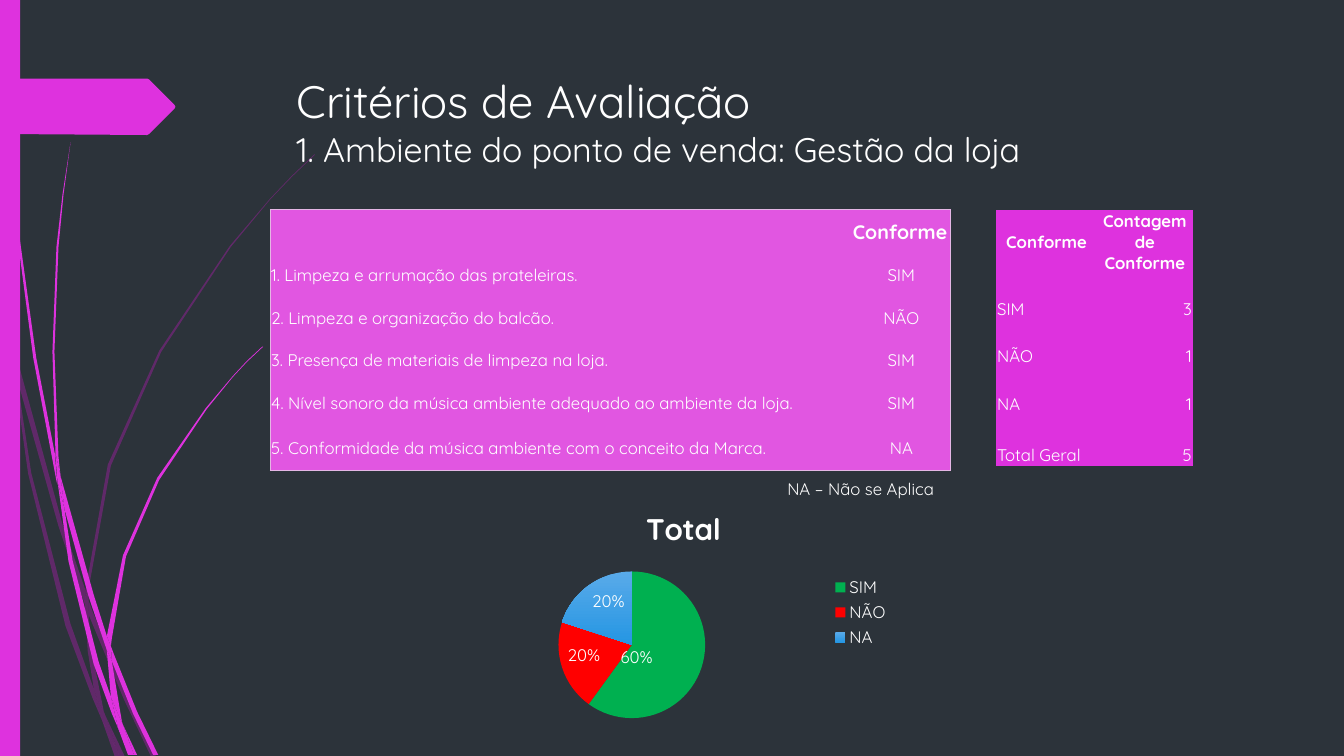
from copy import deepcopy
from dataclasses import dataclass

from pptx import Presentation
from pptx.chart.data import CategoryChartData
from pptx.dml.color import RGBColor as RGB
from pptx.enum.chart import XL_CHART_TYPE as CHART, XL_LABEL_POSITION as LABEL, XL_LEGEND_POSITION as LEGEND
from pptx.enum.shapes import MSO_SHAPE as SHAPE
from pptx.enum.text import MSO_ANCHOR as ANCHOR, MSO_AUTO_SIZE as AUTO, PP_ALIGN as ALIGN
from pptx.oxml import parse_xml
from pptx.oxml.ns import nsdecls, qn
from pptx.util import Inches, Pt
from lxml.etree import SubElement


@dataclass(frozen=True)
class Theme:
    font: str = "Quicksand"
    background: str = "2C333A"
    text: str = "FFFFFF"
    accent: str = "DE32DE"
    faint: str = "B01CB0"
    panel: str = "E156E1"
    border: str = "E4B6E4"
    yes: str = "00B050"
    no: str = "FF0000"
    na: tuple = ("59AAE9", "2596E3")
    title: float = 32.4
    subtitle: float = 24.3
    chart_title: float = 21.3
    header: float = 14
    body: float = 12


T = Theme()
NO_GRID = "{2D5ABB26-0587-4C30-8999-92F81FD0307C}"

# Outlines of the grass blades, as (x, y) points in inches
FAINT_BLADES = [
    [(.11, 3.5), (.09, 3.22), (0, 2.82), (0, 2.99), (.1, 3.44)],
    [(.58, 5.22), (.84, 5.99), (.85, 5.86), (.62, 5.2), (.14, 3.45), (.17, 3.76)],
    [(.92, 6.07), (.88, 5.96), (.88, 6.1), (1.23, 6.94), (1.5, 7.51), (1.55, 7.51), (1.27, 6.92)],
    [(1.19, 7.51), (1.24, 7.51), (1.05, 7.11)],
    [(.93, 6.83), (.7, 6.19), (.31, 4.69), (.17, 3.76), (.11, 3.5), (.28, 4.7), (.65, 6.21),
     (.92, 6.93), (1.01, 7.14), (.99, 7.07)],
    [(.84, 5.99), (.87, 6.46), (.93, 6.83), (.96, 6.92), (1.05, 7.11), (1.03, 7.06), (.91, 6.46),
     (.88, 6.1), (.88, 6.08)],
    [(.88, 5.84), (1.1, 4.62), (1.6, 3.49), (2.29, 2.45), (2.68, 1.98), (2.9, 1.75), (3.12, 1.54),
     (3.12, 1.53), (2.89, 1.75), (2.68, 1.97), (2.28, 2.44), (1.58, 3.48), (1.07, 4.61),
     (.85, 5.84), (.85, 5.86), (.88, 5.96)],
    [(1.01, 7.14), (1.14, 7.51), (1.19, 7.51)],
    [(.88, 6.08), (.88, 6.1), (.88, 5.96), (.85, 5.86), (.84, 5.99)],
    [(.96, 6.92), (.93, 6.83), (.99, 7.07), (1.01, 7.14), (1.19, 7.51), (1.05, 7.11)],
]
BRIGHT_BLADES = [
    [(.07, 1.1), (.17, 2.33), (.33, 3.55), (.56, 4.77), (.57, 4.81), (.55, 4.57), (.55, 4.53),
     (.36, 3.55), (.19, 2.32), (.08, 1.09), (.05, .48), (.04, 0), (.03, 0), (.04, .48)],
    [(.88, 5.92), (1.06, 6.45), (1.06, 6.31), (.93, 5.9), (.6, 4.72), (.64, 5.05)],
    [(1.13, 6.49), (1.1, 6.41), (1.11, 6.56), (1.32, 7.08), (1.52, 7.49), (1.57, 7.49), (1.36, 7.06)],
    [(1.1, 6.91), (.98, 6.57), (.72, 5.56), (.64, 5.05), (.57, 4.77), (.68, 5.57), (.93, 6.59),
     (1.11, 7.08), (1.17, 7.22), (1.16, 7.17)],
    [(.6, 4.72), (.58, 4.53), (.54, 3.49), (.58, 2.45), (.63, 1.93), (.7, 1.41), (.62, 1.93),
     (.56, 2.45), (.52, 3.49), (.55, 4.49)],
    [(1.33, 7.49), (1.36, 7.49), (1.22, 7.19)],
    [(.57, 4.77), (.64, 5.05), (.6, 4.72), (.55, 4.49), (.55, 4.53)],
    [(1.11, 6.33), (1.25, 5.52), (1.58, 4.76), (2.05, 4.06), (2.31, 3.74), (2.45, 3.59), (2.61, 3.44),
     (2.6, 3.44), (2.45, 3.58), (2.31, 3.73), (2.04, 4.05), (1.56, 4.74), (1.22, 5.51),
     (1.06, 6.31), (1.1, 6.41)],
    [(1.17, 7.22), (1.27, 7.49), (1.31, 7.49)],
    [(1.06, 6.45), (1.1, 6.91), (1.16, 7.06), (1.22, 7.19), (1.21, 7.16), (1.11, 6.56), (1.09, 6.51)],
    [(1.06, 6.45), (1.09, 6.51), (1.11, 6.56), (1.1, 6.41), (1.06, 6.31)],
    [(1.16, 7.06), (1.1, 6.91), (1.16, 7.17), (1.17, 7.22), (1.3, 7.49), (1.33, 7.49), (1.22, 7.19)],
]
FLAG = [(0, .78), (1.46, .78), (1.48, .79), (1.73, 1.04), (1.74, 1.06), (1.73, 1.08), (1.48, 1.33),
        (1.46, 1.34), (0, 1.33)]


def rgb(color):
    return RGB.from_string(color)


def set_font(font, size, bold=False):
    font.name, font.size, font.bold = T.font, Pt(size), bold
    font.color.rgb = rgb(T.text)


def paint(sp, color, alpha=None):
    sp.shadow.inherit = False
    sp.fill.solid()
    sp.fill.fore_color.rgb = rgb(color)
    sp.line.fill.background()
    if alpha:
        clr = sp.fill._xPr.find(qn("a:solidFill"))[0]
        SubElement(clr, qn("a:alpha"), val=str(alpha * 1000))


def add_outline(shapes, points, color, alpha=None):
    start, *rest = [(Inches(x), Inches(y)) for x, y in points]
    builder = shapes.build_freeform(*start)
    builder.add_line_segments(rest, close=True)
    paint(builder.convert_to_shape(), color, alpha)


def add_decoration(slide):
    for blades, color, alpha in ((FAINT_BLADES, T.faint, 40), (BRIGHT_BLADES, T.accent, None)):
        group = slide.shapes.add_group_shape()
        for points in blades:
            add_outline(group.shapes, points, color, alpha)
    bar = slide.shapes.add_shape(SHAPE.RECTANGLE, 0, 0, Inches(.2), Inches(7.5))
    paint(bar, T.accent)
    add_outline(slide.shapes, FLAG, T.accent)


def set_title(slide, title, subtitle):
    sp = slide.shapes.title
    sp.left, sp.top, sp.width, sp.height = map(Inches, (2.84, .68, 9.75, 1.4))
    tf = sp.text_frame
    tf.text = f"{title}\v{subtitle}"
    tf.auto_size, tf.vertical_anchor, tf.word_wrap = AUTO.NONE, ANCHOR.TOP, True
    p = tf.paragraphs[0]
    p.alignment = ALIGN.LEFT
    for r, size in zip(p.runs, (T.title, T.subtitle)):
        set_font(r.font, size)


def add_border(cell, sides):
    tcPr = cell._tc.get_or_add_tcPr()
    lines = [parse_xml(f'<a:ln{side} {nsdecls("a")} w="9525"><a:solidFill><a:srgbClr val="{T.border}"/>'
                       f'</a:solidFill></a:ln{side}>') for side in "LRTB" if side in sides]
    for i, line in enumerate(lines):
        tcPr.insert(i, line)


def add_grid(slide, left, top, widths, heights, rows, fill, aligns, anchor, header_size, framed=False):
    frame = slide.shapes.add_table(len(rows), len(widths), Inches(left), Inches(top),
                                   Inches(sum(widths)), Inches(sum(heights)))
    table = frame.table
    table.first_row = table.horz_banding = False
    table._tbl.tblPr.find(qn("a:tableStyleId")).text = NO_GRID
    for column, width in zip(table.columns, widths):
        column.width = Inches(width)
    last_row, last_col = len(rows) - 1, len(widths) - 1
    for i, row in enumerate(rows):
        table.rows[i].height = Inches(heights[i])
        for j, text in enumerate(row):
            cell = table.cell(i, j)
            cell.margin_left = cell.margin_right = cell.margin_top = Inches(.01)
            cell.margin_bottom = 0
            cell.vertical_anchor = anchor if i else ANCHOR.MIDDLE
            cell.fill.solid()
            cell.fill.fore_color.rgb = rgb(fill)
            p = cell.text_frame.paragraphs[0]
            p.text = text
            p.alignment = aligns[bool(i)][j]
            set_font(p.font, T.body if i else header_size, bold=not i)
            for r in p.runs:
                set_font(r.font, T.body if i else header_size, bold=not i)
            if framed:
                edges = {"L": j == 0, "R": j == last_col, "T": i == 0, "B": i == last_row}
                add_border(cell, [side for side, on in edges.items() if on])


def layout_xml(**values):
    parts = "".join(f'<c:{name} val="{value}"/>' for name, value in values.items())
    return parse_xml(f'<c:layout {nsdecls("c")}><c:manualLayout>{parts}</c:manualLayout></c:layout>')


def add_pie(slide, title, categories, values):
    data = CategoryChartData()
    data.categories = categories
    data.add_series(title, values)
    chart = slide.shapes.add_chart(CHART.PIE, *map(Inches, (4.64, 4.88, 4.28, 2.39)), data).chart
    set_font(chart.font, T.body)
    chart.has_title = True
    chart.chart_title.text_frame.text = title
    set_font(chart.chart_title.text_frame.paragraphs[0].runs[0].font, T.chart_title, bold=True)
    chart.has_legend = True
    chart.legend.position, chart.legend.include_in_layout = LEGEND.RIGHT, False
    set_font(chart.legend.font, T.body)
    # Slices
    series = chart.plots[0].series[0]
    for i, color in enumerate((T.yes, T.no)):
        fill = series.points[i].format.fill
        fill.solid()
        fill.fore_color.rgb = rgb(color)
    fill = series.points[2].format.fill
    fill.gradient()
    fill.gradient_angle = 270
    for stop, color in zip(fill.gradient_stops, T.na):
        stop.color.rgb = rgb(color)
    # Percent labels, the first one drawn towards the centre
    labels = series.data_labels
    labels.show_percentage, labels.show_value = True, False
    labels.number_format, labels.number_format_is_linked = "0%", False
    labels.position = LABEL.INSIDE_END
    set_font(labels.font, T.body)
    dLbls = labels._element
    first = parse_xml(f'<c:dLbl {nsdecls("c")}><c:idx val="0"/></c:dLbl>')
    first.append(layout_xml(x=-.1, y=.01))
    for tag in ("numFmt", "txPr", "dLblPos", "showLegendKey", "showVal", "showCatName",
                "showSerName", "showPercent", "showBubbleSize"):
        part = dLbls.find(qn(f"c:{tag}"))
        if part is not None:
            first.append(deepcopy(part))
    dLbls.insert(0, first)
    # Place of the pie within the chart
    plot_area = chart._chartSpace.chart.plotArea
    for old in plot_area.findall(qn("c:layout")):
        plot_area.remove(old)
    plot_area.insert(0, layout_xml(layoutTarget="inner", xMode="edge", yMode="edge",
                                   x=.21, y=.33, w=.34, h=.61))


def add_note(slide, text):
    tf = slide.shapes.add_textbox(*map(Inches, (7.71, 4.7, 1.78, .3))).text_frame
    tf.text = text
    tf.word_wrap = False
    set_font(tf.paragraphs[0].runs[0].font, T.body)


def main():
    prs = Presentation()
    prs.slide_width, prs.slide_height = Inches(13.33), Inches(7.5)
    slide = prs.slides.add_slide(prs.slide_layouts[5])
    slide.background.fill.solid()
    slide.background.fill.fore_color.rgb = rgb(T.background)
    add_decoration(slide)
    set_title(slide, "Critérios de Avaliação", "1. Ambiente do ponto de venda: Gestão da loja")
    left, center, right = ALIGN.LEFT, ALIGN.CENTER, ALIGN.RIGHT
    criteria = [("", "Conforme"),
                ("1. Limpeza e arrumação das prateleiras.", "SIM"),
                ("2. Limpeza e organização do balcão.", "NÃO"),
                ("3. Presença de materiais de limpeza na loja.", "SIM"),
                ("4. Nível sonoro da música ambiente adequado ao ambiente da loja.", "SIM"),
                ("5. Conformidade da música ambiente com o conceito da Marca.", "NA")]
    add_grid(slide, 2.68, 2.08, (5.77, .98), (.44, .42, .42, .42, .44, .45), criteria, T.panel,
             ((left, left), (left, center)), ANCHOR.MIDDLE, T.header, framed=True)
    counts = [("Conforme", "Contagem de Conforme"), ("SIM", "3"), ("NÃO", "1"), ("NA", "1"),
              ("Total Geral", "5")]
    add_grid(slide, 9.88, 2.08, (1, .95), (.61, .46, .46, .48, .51), counts, T.accent,
             ((center, center), (left, right)), ANCHOR.BOTTOM, T.body)
    add_pie(slide, "Total", ("SIM", "NÃO", "NA"), (60, 20, 20))
    add_note(slide, "NA – Não se Aplica")
    prs.save("out.pptx")


if __name__ == "__main__":
    main()
